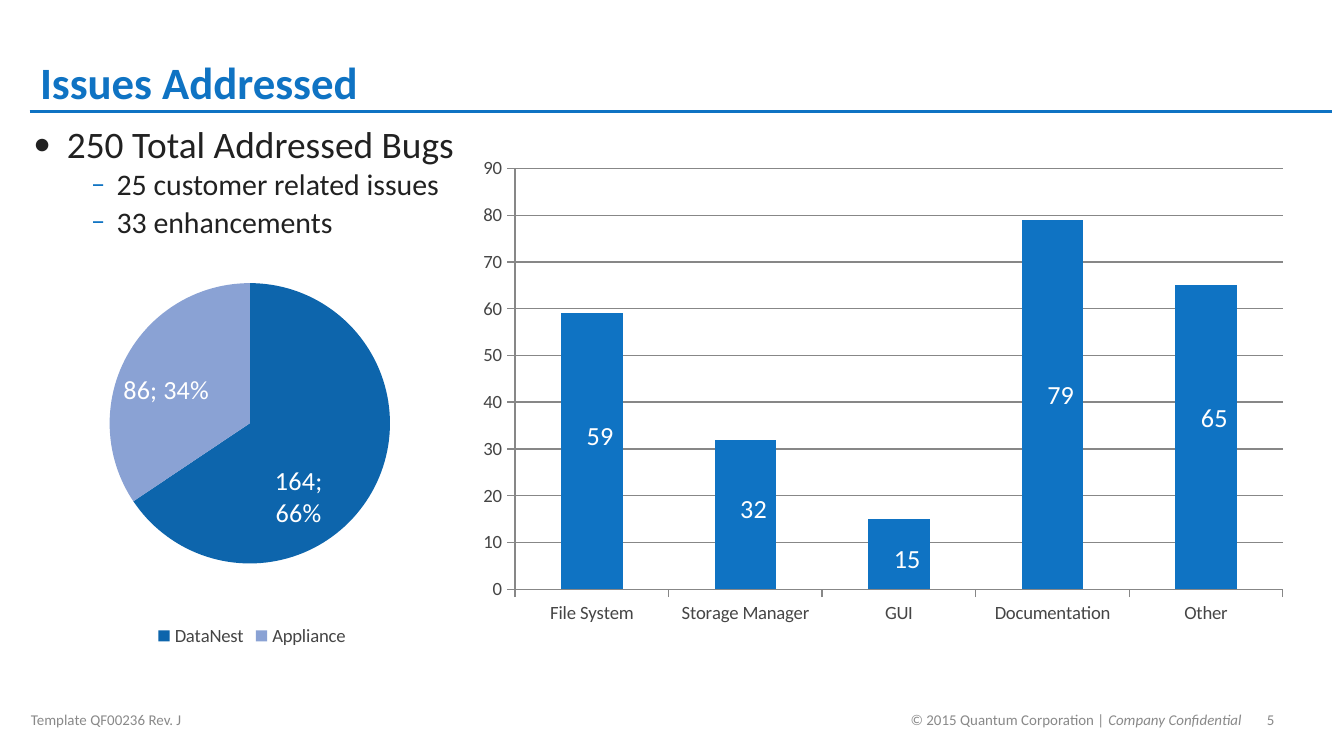
from lxml import etree
from pptx import Presentation
from pptx.chart.data import CategoryChartData
from pptx.dml.color import RGBColor
from pptx.enum.chart import XL_CHART_TYPE as ChartType, XL_LABEL_POSITION as LabelPos
from pptx.enum.chart import XL_LEGEND_POSITION as LegendPos, XL_TICK_MARK as Tick
from pptx.enum.shapes import MSO_CONNECTOR as Connector
from pptx.enum.text import MSO_ANCHOR as Anchor, PP_ALIGN as Align
from pptx.oxml import parse_xml
from pptx.oxml.ns import nsdecls, qn
from pptx.util import Inches, Pt

COLORS = {"blue": "0F73C3", "text": "212121", "footer": "898989", "chart": "454545",
          "grid": "878787", "white": "FFFFFF", "pie_dark": "0D65AC", "pie_light": "8AA2D4"}
RGB = {name: RGBColor.from_string(value) for name, value in COLORS.items()}

# 16:9 slide
prs = Presentation()
prs.slide_width = Inches(10)
prs.slide_height = prs.slide_width * 9 // 16
slide = prs.slides.add_slide(prs.slide_layouts[6])


def add_text(box, anchor, paragraphs, size, color, align=Align.LEFT, inset=0):
    """Add a text box; each paragraph is a list of (text, bold, italic) runs."""
    frame = slide.shapes.add_textbox(*map(Inches, box)).text_frame
    frame.word_wrap = True
    frame.vertical_anchor = anchor
    frame.margin_left = Inches(inset)
    frame.margin_right = frame.margin_top = frame.margin_bottom = 0
    for i, runs in enumerate(paragraphs):
        para = frame.paragraphs[0] if i == 0 else frame.add_paragraph()
        para.alignment = align
        for text, bold, italic in runs:
            run = para.add_run()
            run.text = text
            run.font.name, run.font.size = "Calibri", Pt(size)
            run.font.bold, run.font.italic = bold, italic
            run.font.color.rgb = RGB[color]
    return frame


def add_chart(kind, box, plot_box, points, label_shifts, separators=()):
    """Add a one-series chart with a fixed plot area and shifted white labels.

    Separators, one a point, add the percentage after the value.
    """
    data = CategoryChartData()
    data.categories = [name for name, _ in points]
    data.add_series("Series 1", [value for _, value in points])
    chart = slide.shapes.add_chart(kind, *map(Inches, box), data).chart
    chart.has_title = False
    chart.font.name, chart.font.size = "Calibri", Pt(10)
    chart.font.color.rgb = RGB["chart"]

    def layout(target, **values):
        entries = "".join(f'<c:{key} val="{val}"/>' for key, val in values.items())
        return parse_xml(f'<c:layout {nsdecls("c")}><c:manualLayout>{target}{entries}'
                         '</c:manualLayout></c:layout>')

    plot_area = chart._chartSpace.chart.plotArea
    for old in plot_area.findall(qn("c:layout")):
        plot_area.remove(old)
    x, y, w, h = plot_box
    plot_area.insert(0, layout('<c:layoutTarget val="inner"/>', xMode="edge", yMode="edge",
                               x=x, y=y, w=w, h=h))
    for i, (dx, dy) in enumerate(label_shifts):
        label = chart.plots[0].series[0].points[i].data_label
        label.font.name, label.font.size = "Calibri", Pt(14)
        label.font.color.rgb = RGB["white"]
        label.position = LabelPos.CENTER
        element = plot_area.xpath(".//c:dLbl")[i]
        element.insert(1, layout("", x=dx, y=dy))
        if separators:
            element.find(qn("c:showPercent")).set("val", "1")
            etree.SubElement(element, qn("c:separator")).text = separators[i]
    return chart


# Footer
add_text((0.23, 5.22, 3.16, 0.27), Anchor.MIDDLE,
         [[("Template QF00236 Rev. J", False, False)]], 8, "footer")
add_text((6.08, 5.22, 3.16, 0.27), Anchor.MIDDLE,
         [[("© 2015 Quantum Corporation | ", False, False),
           ("Company Confidential", False, True)]], 8, "footer", Align.RIGHT)
add_text((9.24, 5.22, 0.43, 0.27), Anchor.MIDDLE, [[("5", False, False)]], 8, "footer",
         Align.CENTER)

# Title and rule
title = add_text((0.2, 0.06, 8.13, 0.75), Anchor.BOTTOM,
                 [[("Issues Addressed", True, False)]], 24, "blue", inset=0.1)
title.paragraphs[0].line_spacing = Pt(24)
rule = slide.shapes.add_connector(Connector.STRAIGHT, Inches(0.22), Inches(0.83),
                                  Inches(9.91), Inches(0.83))
rule.line.color.rgb, rule.line.width = RGB["blue"], Pt(1.75)
etree.SubElement(rule._element.spPr, qn("a:effectLst"))

# Bullets
summary = add_text((0.15, 0.9, 9.6, 4.4), Anchor.TOP,
                   [[("250 Total Addressed Bugs", False, False)],
                    [("25 customer related issues", False, False)],
                    [("33 enhancements", False, False)]], 20, "text", inset=0.1)
for i, para in enumerate(summary.paragraphs):
    sub = i > 0
    mark, color, left, hang = ("–", "blue", 0.62, 0.19) if sub else ("•", "text", 0.25, 0.25)
    props = para._p.get_or_add_pPr()
    props.set("marL", str(Inches(left)))
    props.set("indent", str(-Inches(hang)))
    bullet_color = etree.SubElement(props, qn("a:buClr"))
    etree.SubElement(bullet_color, qn("a:srgbClr"), val=COLORS[color])
    etree.SubElement(props, qn("a:buSzPct"), val="95000")
    etree.SubElement(props, qn("a:buFont"), typeface="Calibri")
    etree.SubElement(props, qn("a:buChar"), char=mark)
    if sub:
        para.level = 1
        para.space_after = Pt(1)
        para.runs[0].font.size = Pt(16)

# Column chart: issues by area
areas = add_chart(ChartType.COLUMN_CLUSTERED, (3.46, 1.11, 6.21, 3.6),
                  (0.06, 0.04, 0.92, 0.87),
                  [("File System", 59), ("Storage Manager", 32), ("GUI", 15),
                   ("Documentation", 79), ("Other", 65)],
                  [(0.01, -0.03), (0.01, -0.01), (0.01, 0.01), (0.01, -0.02), (0.01, -0.04)])
areas.has_legend = False
columns = areas.plots[0]
columns.gap_width = 150
columns.vary_by_categories = False
columns.series[0].format.fill.solid()
columns.series[0].format.fill.fore_color.rgb = RGB["blue"]
counts = areas.value_axis
counts.minimum_scale, counts.maximum_scale, counts.major_unit = 0, 90, 10
counts.has_major_gridlines = True
for axis in (areas.category_axis, counts):
    axis.major_tick_mark = Tick.OUTSIDE
for item in (areas.category_axis, counts, counts.major_gridlines):
    item.format.line.color.rgb, item.format.line.width = RGB["grid"], Pt(0.75)

# Pie chart: issues by product
products = add_chart(ChartType.PIE, (0.27, 1.76, 3.21, 3.09), (0.17, 0.11, 0.65, 0.68),
                     [("DataNest", 164), ("Appliance", 86)], [(-0.03, 0.1), (-0.05, 0)],
                     (";\n", "; "))
products.has_legend = True
products.legend.position = LegendPos.BOTTOM
products.legend.include_in_layout = False
products.plots[0].vary_by_categories = True
for i, color in enumerate(("pie_dark", "pie_light")):
    fill = products.plots[0].series[0].points[i].format.fill
    fill.solid()
    fill.fore_color.rgb = RGB[color]

prs.save("out.pptx")
